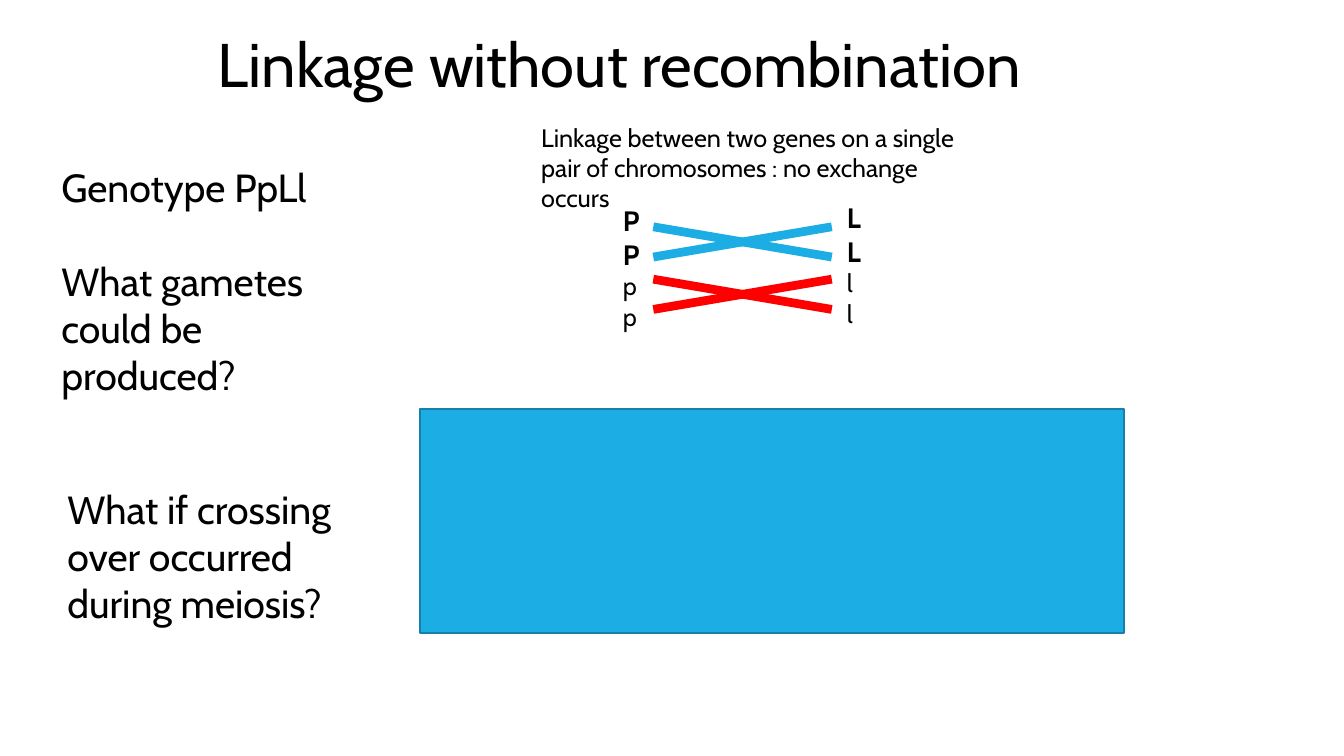
from dataclasses import dataclass

from lxml.etree import SubElement
from pptx import Presentation
from pptx.dml.color import RGBColor
from pptx.enum.shapes import MSO_CONNECTOR, MSO_SHAPE
from pptx.enum.text import MSO_ANCHOR, MSO_AUTO_SIZE, PP_ALIGN
from pptx.oxml.ns import qn
from pptx.shapes.autoshape import Shape
from pptx.slide import Slide
from pptx.util import Inches, Pt

BLACK = RGBColor(0x00, 0x00, 0x00)
BLUE = RGBColor(0x1C, 0xAD, 0xE4)
DARK_BLUE = RGBColor(0x15, 0x80, 0xA9)
RED = RGBColor(0xFF, 0x00, 0x00)

WIDTH, HEIGHT = Inches(13.33), Inches(7.5)
FRAME_FORMAT = {
    "word_wrap": True,
    "auto_size": MSO_AUTO_SIZE.NONE,
    "vertical_anchor": MSO_ANCHOR.TOP,
}


@dataclass(frozen=True)
class Area:
    """A rectangle in percent of the slide's width and height."""
    left: float
    top: float
    width: float
    height: float

    def lengths(self) -> dict[str, int]:
        """Return the rectangle as slide lengths."""
        return {
            "left": across(self.left),
            "top": down(self.top),
            "width": across(self.width),
            "height": down(self.height),
        }


@dataclass(frozen=True)
class Line:
    """One paragraph and its format."""
    text: str
    size: float
    bold: bool = False
    space_before: float = 0


@dataclass(frozen=True)
class Note:
    """A text box with its paragraphs."""
    area: Area
    lines: tuple[Line, ...]


@dataclass(frozen=True)
class Crossing:
    """A pair of crossed chromatids."""
    top: float
    color: RGBColor


def alleles(dominant: str, recessive: str) -> tuple[Line, ...]:
    """Return two bold dominant and two plain recessive alleles."""
    return (Line(dominant, 20, True),) * 2 + (Line(recessive, 18),) * 2


TITLE = Note(Area(15.45, 2.8, 73.82, 11.2), (Line("Linkage without recombination", 44),))
NOTES = (
    Note(Area(3.83, 20.93, 22.96, 32.8), (
        Line("Genotype PpLl", 28),
        Line("What gametes could be produced?", 28, space_before=33.75),
    )),
    Note(Area(4.28, 63.47, 22.43, 20.13), (
        Line("What if crossing over occurred during meiosis?", 28),
    )),
    Note(Area(39.53, 15.47, 33.61, 9.47), (
        Line("Linkage between two genes on a single pair of chromosomes : no exchange occurs", 18),
    )),
    Note(Area(45.61, 26.27, 2.85, 18.4), alleles("P", "p")),
    Note(Area(62.27, 25.87, 2.85, 18.4), alleles("L", "l")),
)
CROSSINGS = (Crossing(30, BLUE), Crossing(36.93, RED))
CROSSING_LEFT, CROSSING_RIGHT, CROSSING_HEIGHT = 48.61, 61.89, 4
PANEL = Area(31.28, 54.13, 52.36, 29.6)


def across(percent: float) -> int:
    """Turn a share of the slide's width into a length."""
    return round(WIDTH * percent / 100)


def down(percent: float) -> int:
    """Turn a share of the slide's height into a length."""
    return round(HEIGHT * percent / 100)


def apply(target: object, values: dict[str, object]) -> None:
    """Set each named attribute of the target."""
    for name, value in values.items():
        setattr(target, name, value)


def write_note(box: Shape, note: Note) -> None:
    """Place a box and fill it with formatted paragraphs."""
    apply(box, note.area.lengths())
    frame = box.text_frame
    apply(frame, FRAME_FORMAT)
    for index, line in enumerate(note.lines):
        para = frame.add_paragraph() if index else frame.paragraphs[0]
        apply(para, {"alignment": PP_ALIGN.LEFT, "space_before": Pt(line.space_before)})
        span = para.add_run()
        span.text = line.text
        apply(span.font, {"name": "Cabin", "size": Pt(line.size), "bold": line.bold})
        span.font.color.rgb = BLACK


def draw_crossing(page: Slide, crossing: Crossing) -> None:
    """Draw two lines that cross each other."""
    top, bottom = down(crossing.top), down(crossing.top + CROSSING_HEIGHT)
    for start, end in ((bottom, top), (top, bottom)):
        chromatid = page.shapes.add_connector(
            MSO_CONNECTOR.STRAIGHT, across(CROSSING_LEFT), start, across(CROSSING_RIGHT), end
        )
        chromatid.line.color.rgb = crossing.color
        chromatid.line.width = Pt(6.25)
        SubElement(chromatid._element.spPr, qn("a:effectLst"))


def draw_panel(page: Slide, area: Area) -> None:
    """Draw the blue answer panel."""
    panel = page.shapes.add_shape(MSO_SHAPE.RECTANGLE, **area.lengths())
    panel.shadow.inherit = False
    panel.fill.solid()
    panel.fill.fore_color.rgb = BLUE
    panel.line.color.rgb = DARK_BLUE
    panel.line.width = Pt(1.25)


def main() -> None:
    """Build the slide and save it."""
    deck = Presentation()
    apply(deck, {"slide_width": WIDTH, "slide_height": HEIGHT})
    page = deck.slides.add_slide(deck.slide_layouts.get_by_name("Title Only"))
    write_note(page.shapes.title, TITLE)
    for note in NOTES:
        write_note(page.shapes.add_textbox(**note.area.lengths()), note)
    for crossing in CROSSINGS:
        draw_crossing(page, crossing)
    draw_panel(page, PANEL)
    deck.save("out.pptx")


if __name__ == "__main__":
    main()
